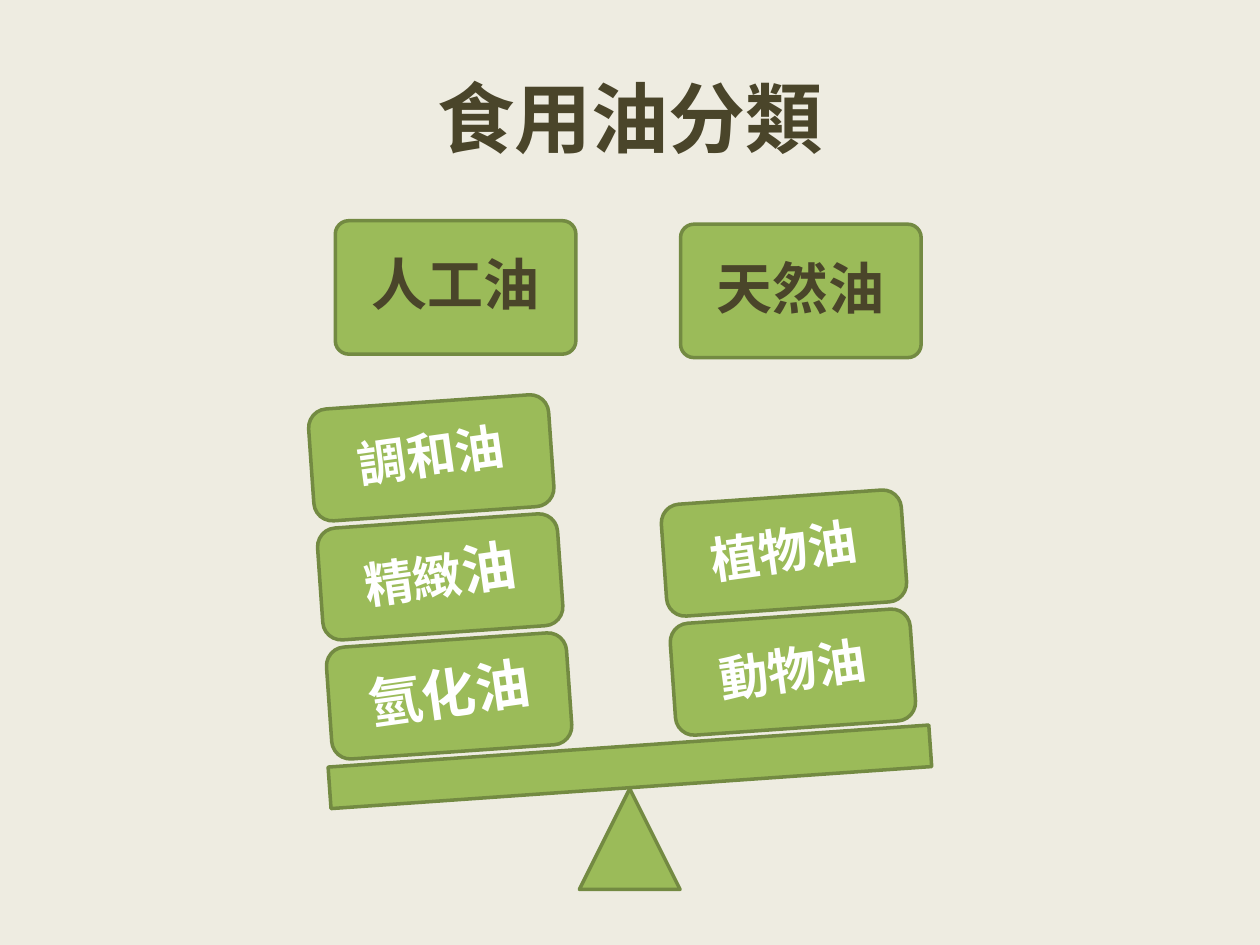
from dataclasses import dataclass

from lxml import etree
from pptx import Presentation
from pptx.dml.color import RGBColor
from pptx.enum.shapes import MSO_SHAPE
from pptx.enum.text import MSO_ANCHOR, PP_ALIGN
from pptx.oxml.ns import qn
from pptx.util import Cm, Pt

RECT = MSO_SHAPE.RECTANGLE
ROUNDED = MSO_SHAPE.ROUNDED_RECTANGLE
TRIANGLE = MSO_SHAPE.ISOSCELES_TRIANGLE
MIDDLE = MSO_ANCHOR.MIDDLE
CENTER = PP_ALIGN.CENTER


@dataclass(frozen=True)
class Theme:
    background: str = "EEECE1"
    fill: str = "9BBB59"
    outline: str = "738A42"
    dark: str = "4A452A"
    light: str = "FFFFFF"
    cjk: str = "Noto Sans CJK SC"
    latin: str = "Calibri"
    title: int = 44
    heading: int = 32
    large: int = 31
    body: int = 28
    border: int = 2


THEME = Theme()

TITLE = "食用油分類"
PANS = [
    {
        "heading": "人工油",
        "heading_at": (6.76, 4.45),
        "base": (6.63, 12.9),
        "oils": [
            ([("氫化油", THEME.large)], THEME.latin),
            ([("精緻", THEME.body), ("油", THEME.large)], THEME.latin),
            ([("調和油", THEME.body)], THEME.cjk),
        ],
    },
    {
        "heading": "天然油",
        "heading_at": (13.72, 4.52),
        "base": (13.56, 12.42),
        "oils": [
            ([("動物油", THEME.body)], THEME.latin),
            ([("植物油", THEME.body)], THEME.latin),
        ],
    },
]

TITLE_BOX = (1.27, 0.76, 22.86, 3.18)
BEAM_BOX = (6.63, 15.04, 12.14, 0.84)
PIVOT_BOX = (11.68, 15.9, 2.03, 2.03)
HEADING_SIZE = (4.85, 2.69)
BLOCK_SIZE = (4.85, 2.26)
STACK_STEP = (-0.18, -2.4)
BEAM_TILT = -4
TEXT_TILT = 2 * BEAM_TILT
INSET = 0.32


def rgb(code):
    return RGBColor.from_string(code)


def add_block(slide, preset, box, tilt=0, corner=None):
    block = slide.shapes.add_shape(preset, *map(Cm, box))
    block.shadow.inherit = False
    block.fill.solid()
    block.fill.fore_color.rgb = rgb(THEME.fill)
    block.line.color.rgb = rgb(THEME.outline)
    block.line.width = Pt(THEME.border)
    block.rotation = tilt
    if corner is not None:
        block.adjustments[0] = corner


def add_label(slide, pieces, box, font_name, color, tilt=0, line_spacing=0.9):
    label = slide.shapes.add_textbox(*map(Cm, box))
    label.rotation = tilt
    frame = label.text_frame
    frame.word_wrap = True
    frame.vertical_anchor = MIDDLE
    frame.margin_left = frame.margin_right = Cm(INSET)
    frame.margin_top = frame.margin_bottom = Cm(INSET)
    paragraph = frame.paragraphs[0]
    paragraph.alignment = CENTER
    paragraph.line_spacing = line_spacing
    font = paragraph.font
    font.name = font_name
    font.bold = True
    font.color.rgb = rgb(color)
    font.size = Pt(pieces[0][1])
    defaults = paragraph._p.pPr.find(qn("a:defRPr"))
    etree.SubElement(defaults, qn("a:ea")).set("typeface", font_name)
    for wording, size in pieces:
        run = paragraph.add_run()
        run.text = wording
        if size != pieces[0][1]:
            run.font.size = Pt(size)


def add_pan(slide, pan):
    heading_box = pan["heading_at"] + HEADING_SIZE
    add_block(slide, ROUNDED, heading_box, corner=0.1)
    add_label(slide, [(pan["heading"], THEME.heading)], heading_box, THEME.cjk, THEME.dark)
    for level, (pieces, font_name) in enumerate(pan["oils"]):
        corner_at = tuple(b + level * s for b, s in zip(pan["base"], STACK_STEP))
        box = corner_at + BLOCK_SIZE
        add_block(slide, ROUNDED, box, BEAM_TILT)
        add_label(slide, pieces, box, font_name, THEME.light, TEXT_TILT)


def main():
    deck = Presentation()
    deck.slide_width, deck.slide_height = Cm(25.4), Cm(19.05)
    slide = deck.slides.add_slide(deck.slide_layouts[6])
    slide.background.fill.solid()
    slide.background.fill.fore_color.rgb = rgb(THEME.background)

    add_label(slide, [(TITLE, THEME.title)], TITLE_BOX, THEME.cjk, THEME.dark, line_spacing=1.0)
    add_block(slide, TRIANGLE, PIVOT_BOX)
    add_block(slide, RECT, BEAM_BOX, BEAM_TILT)
    for pan in PANS:
        add_pan(slide, pan)
    deck.save("out.pptx")


if __name__ == "__main__":
    main()
